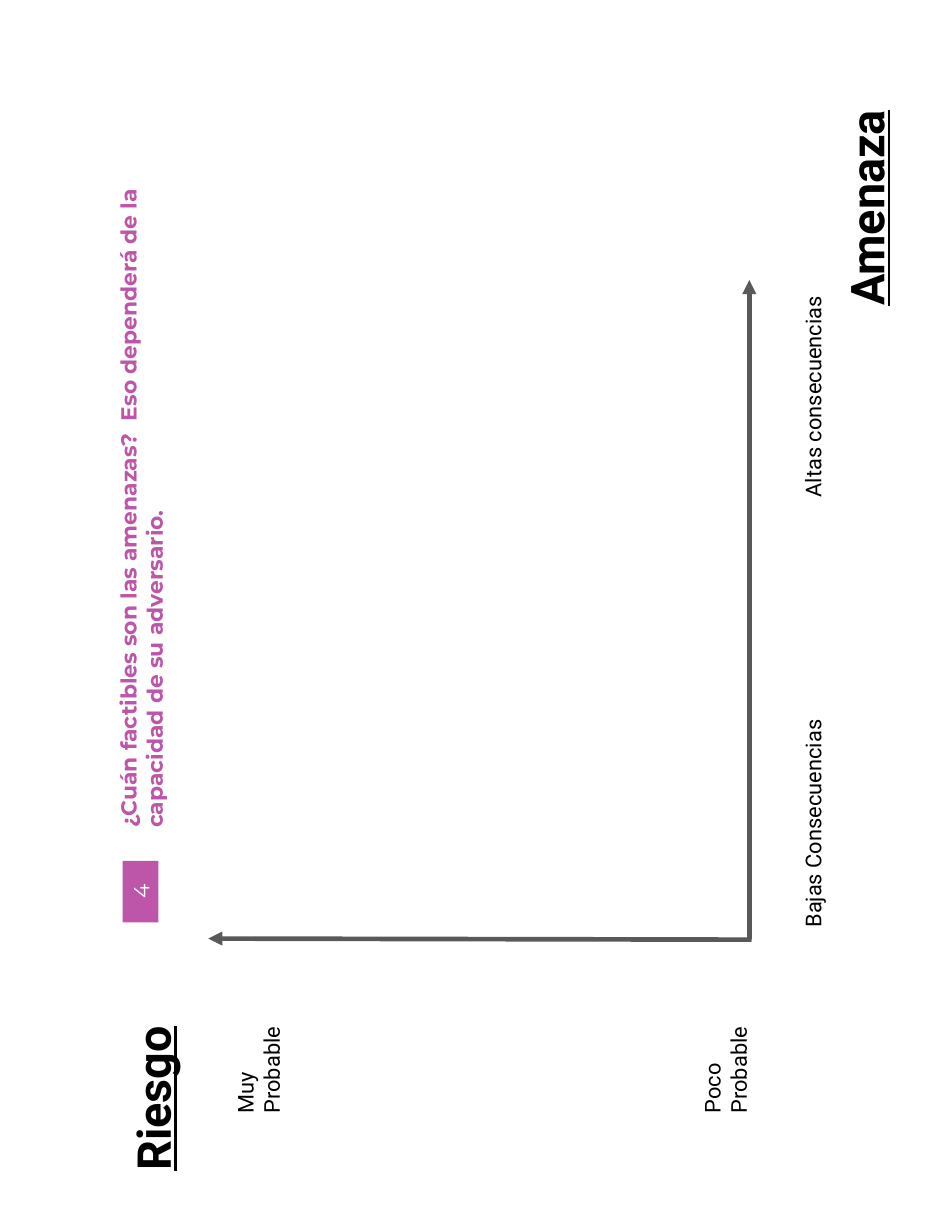
from pptx import Presentation
from pptx.dml.color import RGBColor as Rgb
from pptx.enum.shapes import MSO_CONNECTOR as Link, MSO_SHAPE as Kind
from pptx.enum.text import MSO_ANCHOR as Anchor, PP_ALIGN as Align
from pptx.oxml.ns import qn
from pptx.util import Inches, Pt
from lxml.etree import SubElement as Sub

HUES = {"ink": "000000", "axis": "595959", "mauve": "BD55A9", "white": "FFFFFF"}
LABEL = {"name": "Roboto", "size": Pt(14)}
TITLE = {"name": "Roboto", "size": Pt(30), "bold": True, "underline": True}
ASK = {"name": "Montserrat", "size": Pt(14), "bold": True}
BADGE = {"name": "Montserrat", "size": Pt(14)}


class Page:
    def __init__(self, slide, turn):
        self.slide = slide
        self.turn = turn

    def hue(self, name):
        return Rgb.from_string(HUES[name])

    def fit(self, shape, lines, style, hue, anchor, align=Align.LEFT):
        shape.rotation = self.turn
        frame = shape.text_frame
        pad = Inches(0.1)
        form = {"word_wrap": True, "vertical_anchor": anchor,
                "margin_left": pad, "margin_right": pad,
                "margin_top": pad, "margin_bottom": pad}
        for key, val in form.items():
            setattr(frame, key, val)
        for i, line in enumerate(lines):
            para = frame.add_paragraph() if i else frame.paragraphs[0]
            para.alignment = align
            run = para.add_run()
            run.text = line
            for key, val in style.items():
                setattr(run.font, key, val)
            run.font.color.rgb = self.hue(hue)

    def text(self, box, lines, style, hue="ink", anchor=Anchor.TOP):
        shape = self.slide.shapes.add_textbox(*map(Inches, box))
        self.fit(shape, lines, style, hue, anchor)
        return shape

    def spread(self, box, words, stop, style):
        shape = self.text(box, ["\t".join(words)], style, anchor=Anchor.MIDDLE)
        props = shape.text_frame.paragraphs[0]._p.get_or_add_pPr()
        tabs = Sub(props, qn("a:tabLst"))
        Sub(tabs, qn("a:tab"), pos=str(Inches(stop)), algn="l")

    def badge(self, box, mark, style):
        shape = self.slide.shapes.add_shape(Kind.RECTANGLE, *map(Inches, box))
        shape.shadow.inherit = False
        shape.fill.solid()
        shape.fill.fore_color.rgb = self.hue("mauve")
        shape.line.fill.background()
        self.fit(shape, [mark], style, "white", Anchor.MIDDLE, Align.CENTER)

    def arrow(self, start, end):
        link = self.slide.shapes.add_connector(
            Link.STRAIGHT, *map(Inches, start + end))
        link.line.color.rgb = self.hue("axis")
        link.line.width = Pt(3)
        Sub(link.line._get_or_add_ln(), qn("a:tailEnd"), type="triangle")
        Sub(link._element.spPr, qn("a:effectLst"))


def main():
    deck = Presentation()
    deck.slide_width, deck.slide_height = Inches(8.5), Inches(11)
    page = Page(deck.slides.add_slide(deck.slide_layouts[6]), 270)

    page.arrow((6.69, 8.38), (6.69, 2.5))
    page.arrow((6.71, 8.39), (1.86, 8.38))

    for left, word in ((5.62, "Poco"), (1.45, "Muy")):
        page.text((left, 9.11, 1.45, 0.41), [word, "Probable"], LABEL)
    page.spread((3.53, 4.09, 7.45, 1.13),
                ["Bajas Consecuencias", "Altas consecuencias"], 3.84, LABEL)

    page.text((0.27, 9.4, 1.89, 0.41), ["Riesgo"], TITLE)
    page.text((6.31, 1.35, 2.55, 0.41), ["Amenaza"], TITLE)
    page.text((-1.96, 4.03, 6.44, 0.48),
              ["¿Cuán factibles son las amenazas?  Eso dependerá de la "
               "capacidad de su adversario."], ASK, "mauve", Anchor.MIDDLE)
    page.badge((0.98, 7.8, 0.55, 0.32), "4", BADGE)

    deck.save("out.pptx")


if __name__ == "__main__":
    main()
